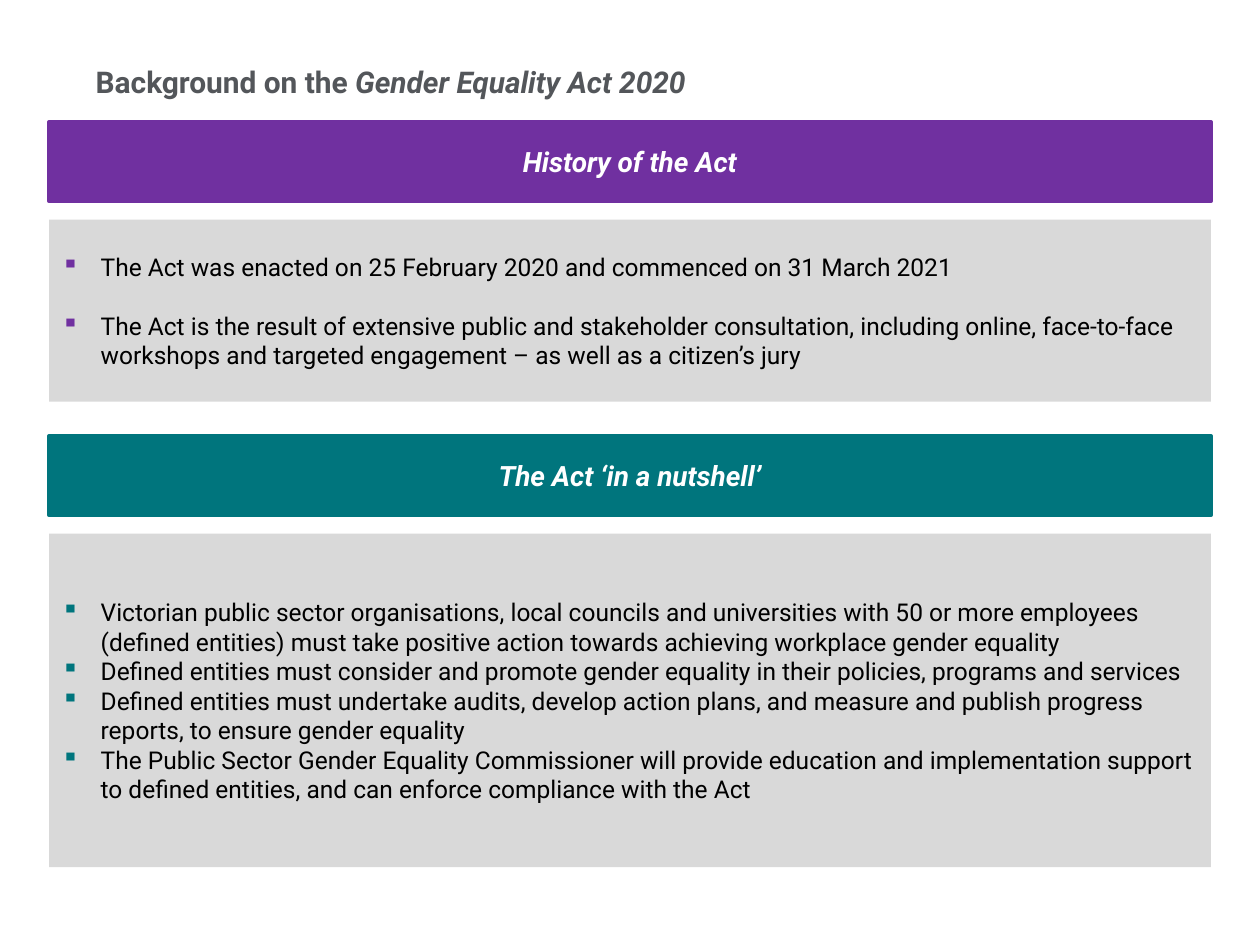
import pptx
import pptx.dml.color
import pptx.enum.shapes
import pptx.enum.text
import pptx.oxml.ns
import pptx.util
from lxml import etree

Cm, Pt = pptx.util.Cm, pptx.util.Pt
RGBColor = pptx.dml.color.RGBColor
ALIGN = pptx.enum.text.PP_ALIGN
ANCHOR = pptx.enum.text.MSO_ANCHOR

FONT = "Roboto"
SLATE = RGBColor(0x53, 0x56, 0x5A)
PURPLE = RGBColor(0x70, 0x30, 0xA0)
TEAL = RGBColor(0x00, 0x75, 0x7D)
GREY = RGBColor(0xD9, 0xD9, 0xD9)
BLACK = RGBColor(0, 0, 0)
WHITE = RGBColor(0xFF, 0xFF, 0xFF)

HEADING_HEIGHT = Cm(1.6)
BODY_OFFSET = Cm(1.97)
INDENT = Cm(0.79)

HISTORY = [
    "The Act was enacted on 25 February 2020 and commenced on 31 March 2021",
    "The Act is the result of extensive public and stakeholder consultation, including online, "
    "face-to-face workshops and targeted engagement – as well as a citizen’s jury",
]
NUTSHELL = [
    "Victorian public sector organisations, local councils and universities with 50 or more "
    "employees (defined entities) must take positive action towards achieving workplace gender equality",
    "Defined entities must consider and promote gender equality in their policies, programs and services",
    "Defined entities must undertake audits, develop action plans, and measure and publish "
    "progress reports, to ensure gender equality",
    "The Public Sector Gender Equality Commissioner will provide education and implementation "
    "support to defined entities, and can enforce compliance with the Act",
]


def add_text(paragraph, text, *, size, color, bold=False, italic=False, align=ALIGN.LEFT):
    paragraph.alignment = align
    run = paragraph.add_run()
    run.text = text
    font = run.font
    font.name, font.size = FONT, Pt(size)
    font.bold, font.italic = bold, italic
    font.color.rgb = color


def add_bullet(paragraph, color):
    """Give the paragraph a hanging indent and a small square in the given colour."""
    properties = paragraph._p.get_or_add_pPr()
    properties.set("marL", str(INDENT))
    properties.set("indent", str(-INDENT))
    qn = pptx.oxml.ns.qn
    bullet_color = etree.SubElement(properties, qn("a:buClr"))
    etree.SubElement(bullet_color, qn("a:srgbClr"), val=str(color))
    etree.SubElement(properties, qn("a:buChar"), char="▪")


def add_block(slide, left, top, width, height, fill):
    """Add a plain filled rectangle and return its text frame and outline."""
    block = slide.shapes.add_shape(
        pptx.enum.shapes.MSO_SHAPE.RECTANGLE, left, top, width, height)
    block.shadow.inherit = False
    block.fill.solid()
    block.fill.fore_color.rgb = fill
    block.line.fill.background()
    frame = block.text_frame
    frame.word_wrap = True
    frame.vertical_anchor = ANCHOR.MIDDLE
    return frame, block.line


def add_title(slide, left, top, width, height):
    title = slide.shapes.title
    title.left, title.top, title.width, title.height = left, top, width, height
    frame = title.text_frame
    frame.margin_left = frame.margin_right = frame.margin_top = frame.margin_bottom = 0
    frame.vertical_anchor = ANCHOR.BOTTOM
    frame.word_wrap = True
    frame.auto_size = pptx.enum.text.MSO_AUTO_SIZE.NONE
    for text, italic in (("Background on the ", False), ("Gender Equality Act 2020", True)):
        add_text(frame.paragraphs[0], text, size=17.1, color=SLATE, bold=True, italic=italic)


def add_panel(slide, left, top, width, height, *, heading, points, color, gap=0):
    """Add a coloured heading bar above a grey box of bullet points."""
    body, _ = add_block(slide, left, top + BODY_OFFSET, width, height - BODY_OFFSET, GREY)
    for index, point in enumerate(points):
        paragraph = body.add_paragraph() if index else body.paragraphs[0]
        add_bullet(paragraph, color)
        if index:
            paragraph.space_before = Pt(gap)
        add_text(paragraph, point, size=14, color=BLACK)

    bar, outline = add_block(slide, left, top, width, HEADING_HEIGHT, color)
    outline.color.rgb = color
    outline.width = Pt(2.25)
    bar.paragraphs[0].space_after = Pt(6)
    add_text(bar.paragraphs[0], heading, size=16, color=WHITE,
             bold=True, italic=True, align=ALIGN.CENTER)


def main():
    deck = pptx.Presentation()
    deck.slide_width, deck.slide_height = Cm(25.4), Cm(19.05)
    slide = deck.slides.add_slide(deck.slide_layouts[5])
    add_title(slide, Cm(1.93), Cm(0), Cm(17.1), Cm(2))
    left, width = Cm(0.99), Cm(23.42)
    add_panel(slide, left, Cm(2.46), width, Cm(5.64),
              heading="History of the Act", points=HISTORY, color=PURPLE, gap=16.8)
    add_panel(slide, left, Cm(8.79), width, Cm(8.69),
              heading="The Act ‘in a nutshell’", points=NUTSHELL, color=TEAL)
    deck.save("out.pptx")


if __name__ == "__main__":
    main()
